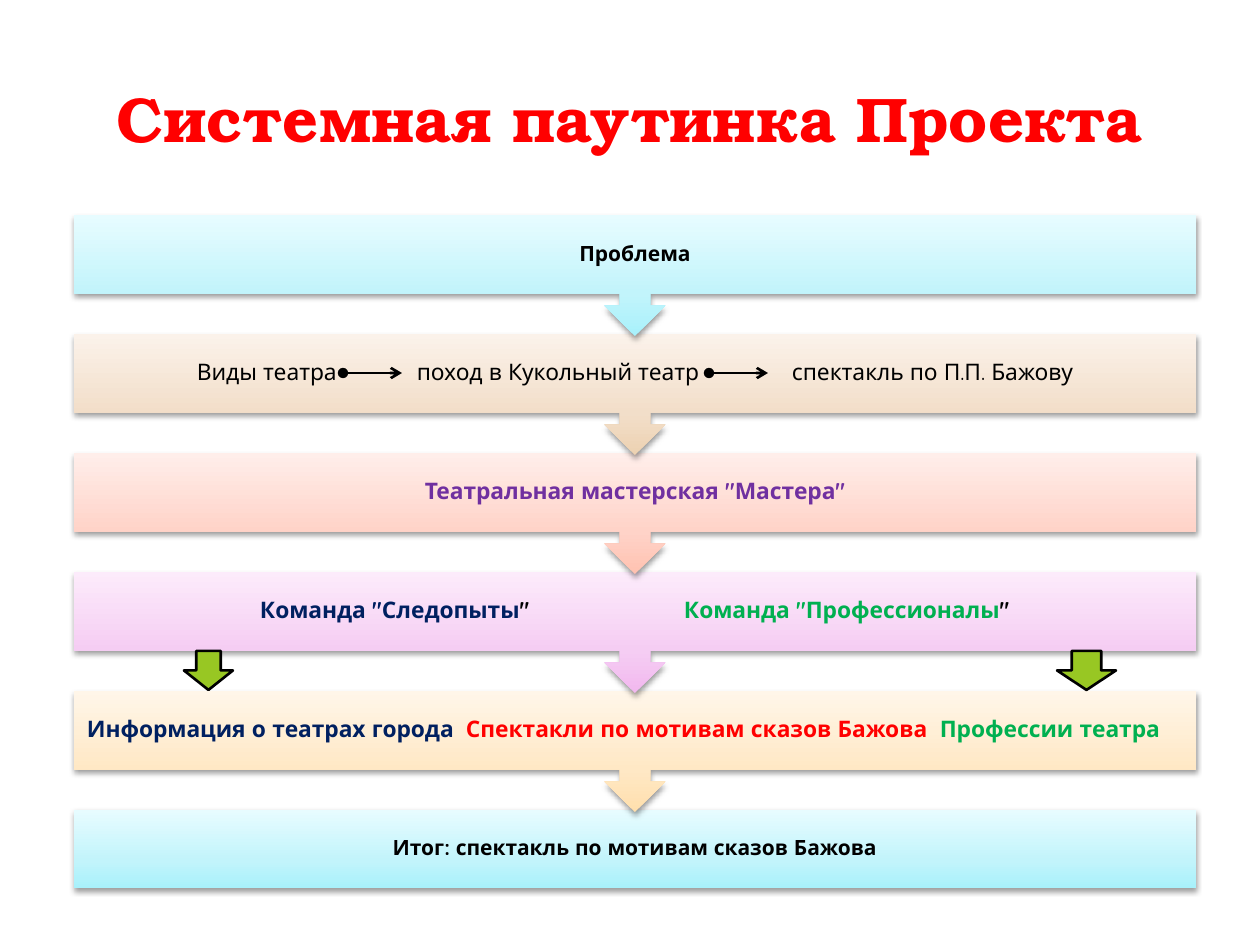
from lxml.etree import SubElement
from pptx import Presentation
from pptx.dml.color import RGBColor
from pptx.enum.shapes import MSO_CONNECTOR, MSO_SHAPE
from pptx.enum.text import MSO_ANCHOR, PP_ALIGN
from pptx.oxml.ns import qn
from pptx.util import Emu, Pt

SCALE = 914400 / 126
INSET = 13
COLORS = {
    "red": "FF0000", "black": "000000", "navy": "002060", "green": "00B050",
    "purple": "7030A0", "lime": "98C723",
}
GRADIENTS = {
    "aqua": ("A8F1FB", "C2F4FB", "E7FCFF"),
    "sand": ("EDD2B2", "F2DEC9", "FBF2EA"),
    "coral": ("FFC2B1", "FFD3C8", "FFEEEA"),
    "lilac": ("F2B8EF", "F5CDF3", "FCEBFB"),
    "amber": ("FFDFAD", "FFE8C5", "FFF6E9"),
}
HEADING = {"name": "TeX Gyre Bonum", "size": Pt(36), "bold": True}
ENDPOINT = {"name": "Quicksand", "size": Pt(12), "bold": True}
STAGE = {"name": "Quicksand", "size": Pt(13), "bold": True}
PLAIN = {**STAGE, "bold": False}
STEPS = [
    ("aqua", ENDPOINT, [("Проблема", "black")], []),
    ("sand", PLAIN, [("\tВиды театра\tпоход в Кукольный театр\tспектакль по П.П. Бажову", "black")],
     [110, 330, 705]),
    ("coral", STAGE, [("Театральная мастерская \"Мастера\"", "purple")], []),
    ("lilac", STAGE, [("\tКоманда \"Следопыты", "navy"), ("\"", "black"),
                      ("\tКоманда \"Профессионалы", "green"), ("\"", "black")], [173, 597]),
    ("amber", STAGE, [("Информация о театрах города", "navy"),
                      ("\tСпектакли по мотивам сказов Бажова", "red"),
                      ("\tПрофессии театра", "green")], [379, 853]),
    ("aqua", ENDPOINT, [("Итог: спектакль по мотивам сказов Бажова", "black")], []),
]


def px(*lengths):
    """Turn pixel lengths into EMU."""
    return [Emu(round(length * SCALE)) for length in lengths]


def color(name):
    """Look up a named colour."""
    return RGBColor.from_string(COLORS[name])


def apply_format(target, values):
    """Set each format value on the target."""
    for attribute, value in values.items():
        setattr(target, attribute, value)


def write_runs(paragraph, runs, font_format):
    """Write coloured runs in one font format."""
    for wording, hue in runs:
        run = paragraph.add_run()
        run.text = wording
        apply_format(run.font, font_format)
        run.font.color.rgb = color(hue)


def add_heading(slide, box):
    """Place the heading in the middle of its box."""
    frame = slide.shapes.add_textbox(*px(*box)).text_frame
    apply_format(frame, {"word_wrap": True, "vertical_anchor": MSO_ANCHOR.MIDDLE})
    frame.paragraphs[0].alignment = PP_ALIGN.CENTER
    write_runs(frame.paragraphs[0], [("Системная паутинка Проекта", "red")], HEADING)


def shade_step(step, hues):
    """Give a step its upward gradient and soft shadow."""
    properties = step.element.spPr
    gradient = SubElement(properties, qn("a:gradFill"), rotWithShape="1")
    stops = SubElement(gradient, qn("a:gsLst"))
    for position, hue in zip((0, 35, 100), hues):
        stop = SubElement(stops, qn("a:gs"), pos=str(position * 1000))
        SubElement(stop, qn("a:srgbClr"), val=hue)
    SubElement(gradient, qn("a:lin"), ang="16200000", scaled="0")
    step.line.fill.background()
    step.shadow.inherit = False
    shadow = SubElement(properties.find(qn("a:effectLst")), qn("a:outerShdw"), blurRad="40000",
                        dist="20000", dir="5400000", rotWithShape="0")
    shade = SubElement(shadow, qn("a:srgbClr"), val=COLORS["black"])
    SubElement(shade, qn("a:alpha"), val="38000")


def add_step(slide, box, preset, content):
    """Place one step with its wording on tab stops or centred."""
    hue, font_format, runs, stops = content
    step = slide.shapes.add_shape(preset, *px(*box))
    shade_step(step, GRADIENTS[hue])
    frame = step.text_frame
    margin = px(INSET)[0]
    apply_format(frame, {"word_wrap": True, "vertical_anchor": MSO_ANCHOR.MIDDLE,
                         "margin_left": margin, "margin_right": margin,
                         "margin_top": margin, "margin_bottom": margin})
    paragraph = frame.paragraphs[0]
    if stops:
        tabs = SubElement(paragraph._p.get_or_add_pPr(), qn("a:tabLst"))
        for position in px(*stops):
            SubElement(tabs, qn("a:tab"), pos=str(position), algn="l")
    apply_format(paragraph, {"alignment": PP_ALIGN.LEFT if stops else PP_ALIGN.CENTER,
                             "line_spacing": 0.9})
    write_runs(paragraph, runs, font_format)


def add_link(slide, left, y, width):
    """Place a link from a dot to an arrowhead."""
    link = slide.shapes.add_connector(MSO_CONNECTOR.STRAIGHT, *px(left, y, left + width, y))
    link.line.color.rgb = color("black")
    link.line.width = Pt(1.5)
    outline = link.line._get_or_add_ln()
    SubElement(outline, qn("a:headEnd"), type="oval")
    SubElement(outline, qn("a:tailEnd"), type="arrow")
    SubElement(link._element.spPr, qn("a:effectLst"))


def add_team_arrow(slide, box):
    """Place a green arrow from a team to its result."""
    arrow = slide.shapes.add_shape(MSO_SHAPE.DOWN_ARROW, *px(*box))
    arrow.shadow.inherit = False
    arrow.fill.solid()
    arrow.fill.fore_color.rgb = color("lime")
    arrow.line.color.rgb = color("black")
    arrow.line.width = Pt(1.5)


def add_flow(slide, box):
    """Stack the steps so each arrow lies over the step below it."""
    left, top, width, height = box
    band = 78
    pitch = (height - band) // (len(STEPS) - 1)
    last = len(STEPS) - 1
    for index, content in reversed(list(enumerate(STEPS))):
        preset, depth = ((MSO_SHAPE.RECTANGLE, band) if index == last
                         else (MSO_SHAPE.DOWN_ARROW_CALLOUT, pitch + 2))
        add_step(slide, (left, top + index * pitch, width, depth), preset, content)
    for offset in (269, 635):
        add_link(slide, left + offset, top + pitch + band // 2, 59)
    for offset, arrow_width in ((110, 49), (983, 59)):
        add_team_arrow(slide, (left + offset, top + 3 * pitch + band + 1, arrow_width, 39))


def main():
    """Build and save the slide."""
    deck = Presentation()
    deck.slide_width, deck.slide_height = px(1260, 945)
    slide = deck.slides.add_slide(deck.slide_layouts[6])
    add_heading(slide, (63, 38, 1134, 158))
    add_flow(slide, (74, 215, 1122, 673))
    deck.save("out.pptx")


if __name__ == "__main__":
    main()
